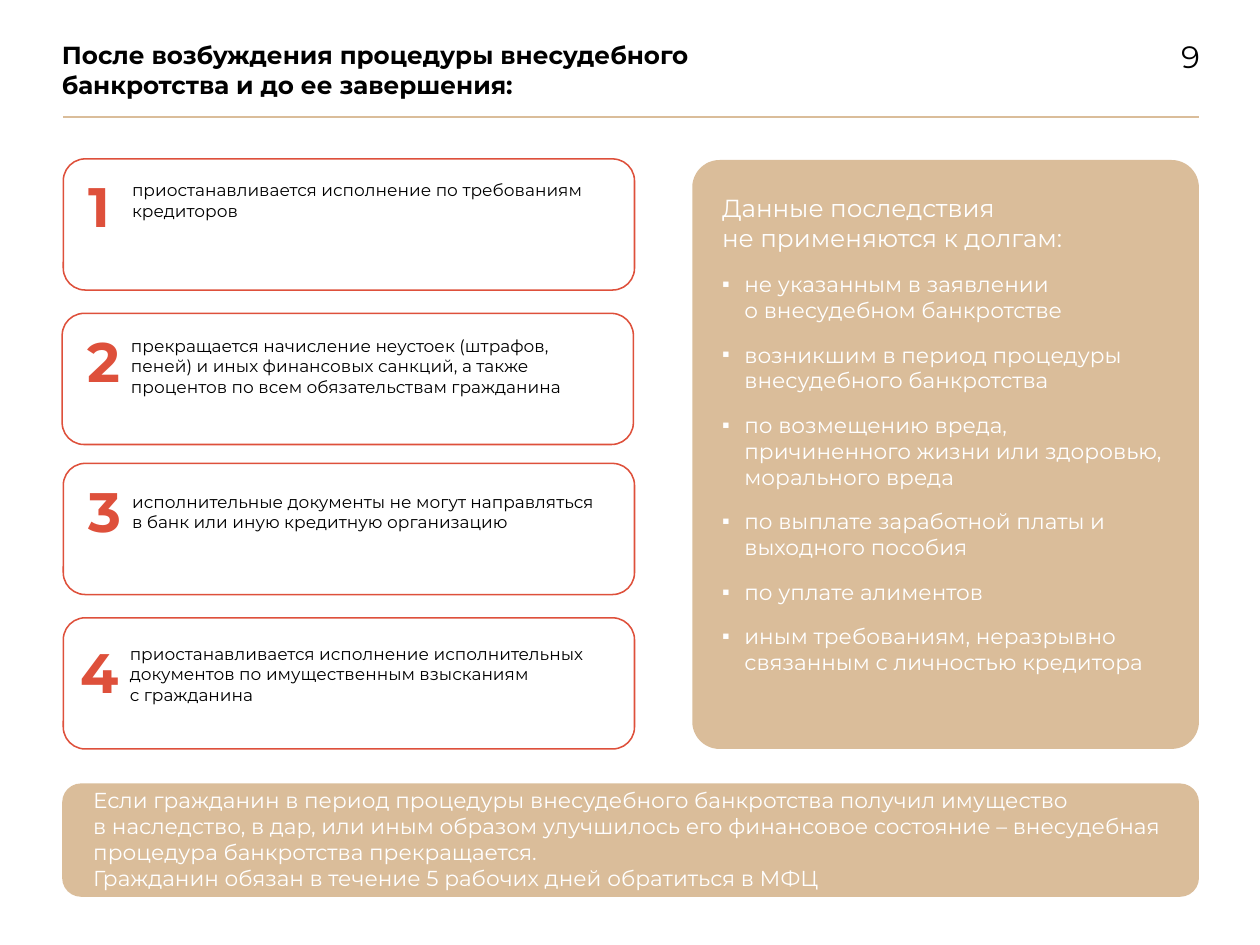
from lxml import etree
from pptx import Presentation
from pptx.dml.color import RGBColor
from pptx.enum import shapes, text
from pptx.oxml.ns import qn
from pptx.util import Inches, Pt

FONT = "Montserrat"
BLACK = RGBColor(0x00, 0x00, 0x00)
WHITE = RGBColor(0xFF, 0xFF, 0xFF)
SAND = RGBColor(0xDA, 0xBD, 0x9A)
RED = RGBColor(0xDE, 0x50, 0x3B)

TITLE = "После возбуждения процедуры внесудебного\nбанкротства и до ее завершения:"

# Card corner (left, top), number (left, top, width, height), text box, wording
CARDS = [
    ((0.57, 1.43), (0.7, 1.5, 0.4, 0.71), (1.09, 1.57, 4.53, 0.47),
     "приостанавливается исполнение по требованиям кредиторов"),
    ((0.56, 2.82), (0.69, 2.89, 0.5, 0.71), (1.08, 2.97, 4.34, 0.66),
     "прекращается начисление неустоек (штрафов, пеней) и иных финансовых "
     "санкций, а также процентов по всем обязательствам гражданина"),
    ((0.57, 4.17), (0.7, 4.24, 0.5, 0.71), (1.09, 4.37, 4.42, 0.47),
     "исполнительные документы не могут направляться в банк или иную "
     "кредитную организацию"),
    ((0.57, 5.56), (0.63, 5.69, 0.55, 0.71), (1.07, 5.74, 4.44, 0.66),
     "приостанавливается исполнение исполнительных документов по "
     "имущественным взысканиям \nс гражданина"),
]

DEBTS_HEADING = "Данные последствия \nне применяются к долгам:"
DEBTS = [
    "не указанным в заявлении \nо внесудебном банкротстве",
    "возникшим в период процедуры внесудебного банкротства",
    "по возмещению вреда, причиненного жизни или здоровью, морального вреда",
    "по выплате заработной платы и выходного пособия",
    "по уплате алиментов",
    "иным требованиям, неразрывно связанным с личностью кредитора",
]

NOTE = [
    "Если гражданин в период процедуры внесудебного банкротства получил имущество \n"
    "в наследство, в дар, или иным образом улучшилось его финансовое состояние – "
    "внесудебная процедура банкротства прекращается.",
    "Гражданин обязан в течение 5 рабочих дней обратиться в МФЦ",
]


def add_panel(s, box, fill, line=None, adj=None):
    sp = s.shapes.add_shape(shapes.MSO_SHAPE.ROUNDED_RECTANGLE, *map(Inches, box))
    sp.shadow.inherit = False
    sp.fill.solid()
    sp.fill.fore_color.rgb = fill
    if line is None:
        sp.line.fill.background()
    else:
        sp.line.color.rgb = line
        sp.line.width = Pt(1)
    if adj is not None:
        sp.adjustments[0] = adj


def add_text(s, box, paragraphs, size, color, bold=False, wrap=True, after=0):
    tf = s.shapes.add_textbox(*map(Inches, box)).text_frame
    tf.word_wrap = wrap
    tf.auto_size = text.MSO_AUTO_SIZE.SHAPE_TO_FIT_TEXT
    for i, wording in enumerate(paragraphs):
        p = tf.paragraphs[0] if i == 0 else tf.add_paragraph()
        p.text = wording
        p.space_after = Pt(after)
        for r in p.runs:
            r.font.name = FONT
            r.font.size = Pt(size)
            r.font.bold = bold
            r.font.color.rgb = color
    return tf


def add_rule(s, left, right, y):
    ln = s.shapes.add_connector(shapes.MSO_CONNECTOR.STRAIGHT,
                                Inches(left), Inches(y), Inches(right), Inches(y))
    ln.line.color.rgb = SAND
    ln.line.width = Pt(1.5)
    etree.SubElement(ln._element.spPr, qn("a:effectLst"))


def add_bullet(p, indent=0.2):
    pPr = p._p.get_or_add_pPr()
    pPr.set("marL", str(Inches(indent)))
    pPr.set("indent", str(-Inches(indent)))
    etree.SubElement(pPr, qn("a:buFont"), typeface="Arial")
    etree.SubElement(pPr, qn("a:buChar"), char="▪")


def add_card(s, number, corner, number_box, text_box, wording):
    add_panel(s, (*corner, 5.14, 1.18), WHITE, line=RED)
    add_text(s, number_box, [str(number)], 36, RED, bold=True, wrap=False)
    add_text(s, text_box, [wording], 11, BLACK)


def add_debts(s):
    add_panel(s, (6.23, 1.44, 4.56, 5.3), SAND, adj=0.054)
    tf = add_text(s, (6.4, 1.69, 4.18, 4.88), [DEBTS_HEADING, *DEBTS], 14, WHITE, after=12)
    heading, *items = tf.paragraphs
    for r in heading.runs:
        r.font.size = Pt(16)
    for p in items:
        add_bullet(p)


def main():
    prs = Presentation()
    # 28.8 by 21.6 cm
    prs.slide_width = Inches(28.8 / 2.54)
    prs.slide_height = Inches(21.6 / 2.54)
    s = prs.slides.add_slide(prs.slide_layouts[6])

    # Header
    add_text(s, (0.46, 0.31, 6.74, 0.64), [TITLE], 16, BLACK, bold=True)
    add_text(s, (10.53, 0.29, 0.37, 0.44), ["9"], 20, BLACK, wrap=False)
    add_rule(s, 0.57, 10.79, 1.05)

    # Numbered consequences
    for number, card in enumerate(CARDS, 1):
        add_card(s, number, *card)

    # Closing note
    add_panel(s, (0.56, 7.05, 10.23, 1.02), SAND)
    add_text(s, (0.74, 7.03, 9.85, 1.04), NOTE, 14, WHITE)

    # Debts that are not covered
    add_debts(s)

    prs.save("out.pptx")


if __name__ == "__main__":
    main()
